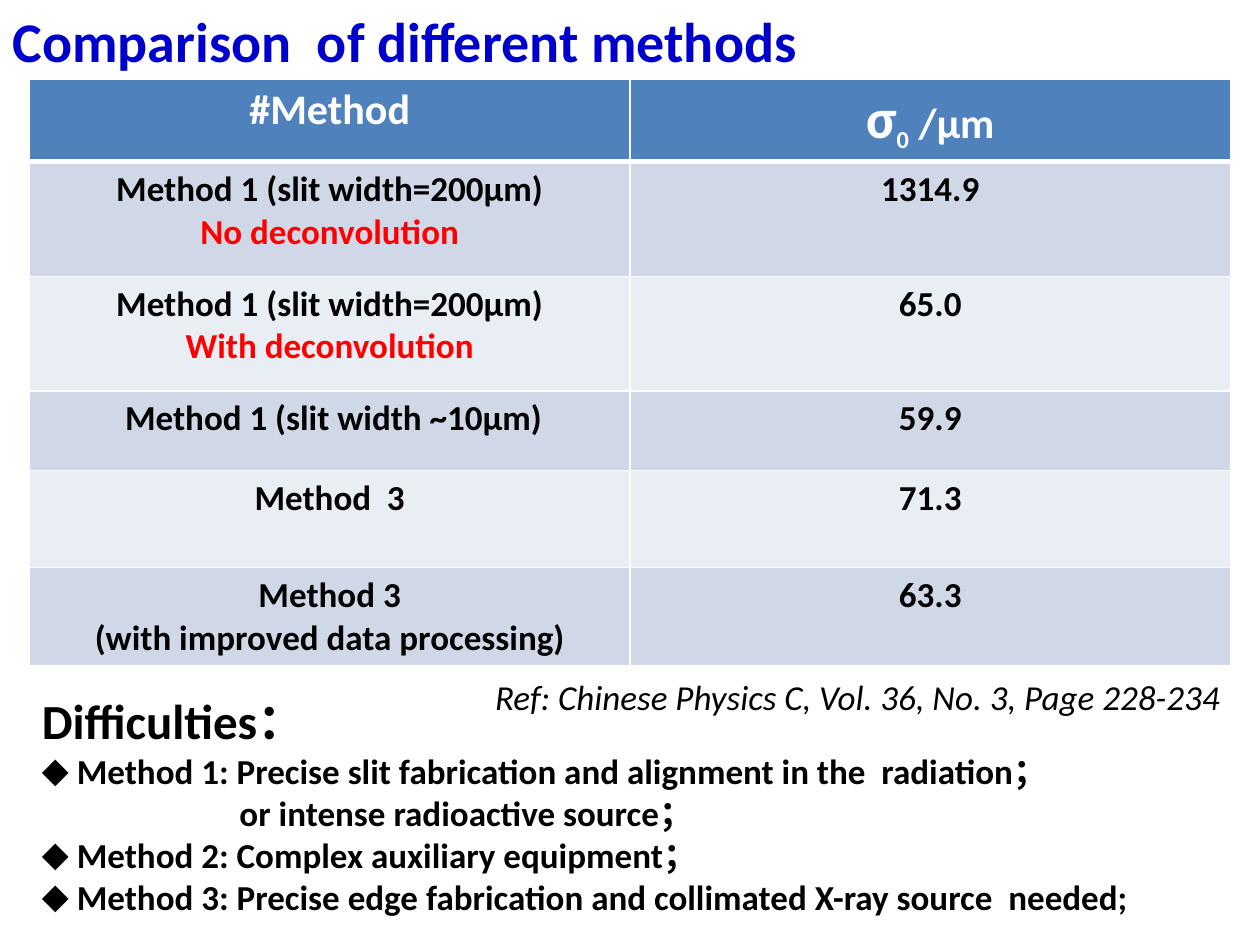
from lxml import etree
from pptx import Presentation
from pptx.dml.color import RGBColor
from pptx.enum.text import MSO_ANCHOR, PP_ALIGN
from pptx.oxml.ns import qn
from pptx.util import Pt

FONT = "Calibri"
BLUE = RGBColor(0x00, 0x00, 0xCC)
RED = RGBColor(0xFF, 0x00, 0x00)
BLACK = RGBColor(0x00, 0x00, 0x00)
WHITE = RGBColor(0xFF, 0xFF, 0xFF)
HEADER = RGBColor(0x4F, 0x81, 0xBD)
BANDS = [RGBColor(0xD0, 0xD8, 0xE8), RGBColor(0xE9, 0xED, 0xF4)]

TITLE = "Comparison  of different methods"
REFERENCE = "Ref: Chinese Physics C, Vol. 36, No. 3, Page 228-234"
SLIT = "Method 1 (slit width=200μm)"
# Method lines as (text, colour), then the measured value
RESULTS = [
    ([(SLIT, BLACK), ("No deconvolution", RED)], "1314.9"),
    ([(SLIT, BLACK), ("With deconvolution", RED)], "65.0"),
    ([(" Method 1 (slit width ~10μm)", BLACK)], "59.9"),
    ([("Method  3", BLACK)], "71.3"),
    ([("Method 3", BLACK), ("(with improved data processing)", BLACK)], "63.3"),
]
ROW_HEIGHTS = [44, 65.5, 65.5, 45.5, 55.5, 55.5]
COL_WIDTH = 343.2
# (text, has bullet)
DIFFICULTIES = [
    ("Method 1: Precise slit fabrication and alignment in the  radiation；", True),
    ("or intense radioactive source；", False),
    ("Method 2: Complex auxiliary equipment；", True),
    ("Method 3: Precise edge fabrication and collimated X-ray source  needed;", True),
]
BULLET_INDENT, CONTINUED_INDENT = 20, 113


def add_run(p, text, size, color=BLACK, bold=True, italic=False):
    r = p.add_run()
    r.text = text
    f = r.font
    f.name, f.size, f.bold, f.italic = FONT, Pt(size), bold, italic
    f.color.rgb = color
    return r


def next_paragraph(tf):
    """Return the first paragraph while it is unused, else a new one."""
    first = tf.paragraphs[0]
    return tf.add_paragraph() if first.runs else first


def add_centered(tf):
    p = next_paragraph(tf)
    p.alignment = PP_ALIGN.CENTER
    return p


def set_indent(p, left, bullet):
    pPr = p._p.get_or_add_pPr()
    pPr.set("marL", str(Pt(left)))
    pPr.set("indent", str(Pt(-left if bullet else 0)))
    if bullet:
        etree.SubElement(pPr, qn("a:buFont")).set("typeface", FONT)
        etree.SubElement(pPr, qn("a:buChar")).set("char", "◆")


def set_borders(cell, bottom):
    tcPr = cell._tc.get_or_add_tcPr()
    widths = {"a:lnL": 1, "a:lnR": 1, "a:lnT": 1, "a:lnB": bottom}
    for i, (tag, width) in enumerate(widths.items()):
        ln = etree.Element(qn(tag), w=str(Pt(width)))
        fill = etree.SubElement(ln, qn("a:solidFill"))
        etree.SubElement(fill, qn("a:srgbClr")).set("val", str(WHITE))
        tcPr.insert(i, ln)


def add_text_box(s, left, top, width, height, wrap):
    tf = s.shapes.add_textbox(Pt(left), Pt(top), Pt(width), Pt(height)).text_frame
    tf.word_wrap = wrap
    return tf


def add_results_table(s):
    frame = s.shapes.add_table(len(ROW_HEIGHTS), 2, Pt(16.8), Pt(45),
                               Pt(2 * COL_WIDTH), Pt(sum(ROW_HEIGHTS)))
    table = frame.table
    for col in table.columns:
        col.width = Pt(COL_WIDTH)
    for i, height in enumerate(ROW_HEIGHTS):
        table.rows[i].height = Pt(height)
        for cell in table.rows[i].cells:
            cell.fill.solid()
            cell.fill.fore_color.rgb = BANDS[(i - 1) % 2] if i else HEADER
            set_borders(cell, 1 if i else 3)

    add_run(add_centered(table.cell(0, 0).text_frame), "#Method", 24, WHITE)
    p = add_centered(table.cell(0, 1).text_frame)
    add_run(p, "σ", 32, WHITE)
    subscript = add_run(p, "0", 24, WHITE)
    subscript.font._element.set("baseline", "-25000")
    add_run(p, " /μm", 24, WHITE)

    for i, (lines, value) in enumerate(RESULTS, 1):
        for text, color in lines:
            add_run(add_centered(table.cell(i, 0).text_frame), text, 20, color)
        add_run(add_centered(table.cell(i, 1).text_frame), value, 20)


def main():
    prs = Presentation()
    prs.slide_width, prs.slide_height = Pt(720), Pt(540)
    s = prs.slides.add_slide(prs.slide_layouts[5])

    add_results_table(s)

    title = s.shapes.title
    title.left, title.top, title.width, title.height = Pt(0), Pt(0), Pt(468), Pt(46)
    tf = title.text_frame
    tf.word_wrap = False
    tf.vertical_anchor = MSO_ANCHOR.TOP
    p = tf.paragraphs[0]
    p.alignment = PP_ALIGN.LEFT
    add_run(p, TITLE, 32, BLUE)

    tf = add_text_box(s, 275.8, 382.5, 432, 31.5, False)
    add_run(tf.paragraphs[0], REFERENCE, 20, bold=False, italic=True)

    tf = add_text_box(s, 16.8, 391, 720, 138, True)
    add_run(tf.paragraphs[0], "Difficulties：", 28)
    for text, bullet in DIFFICULTIES:
        p = next_paragraph(tf)
        set_indent(p, BULLET_INDENT if bullet else CONTINUED_INDENT, bullet)
        add_run(p, text, 20)

    prs.save("out.pptx")


if __name__ == "__main__":
    main()
